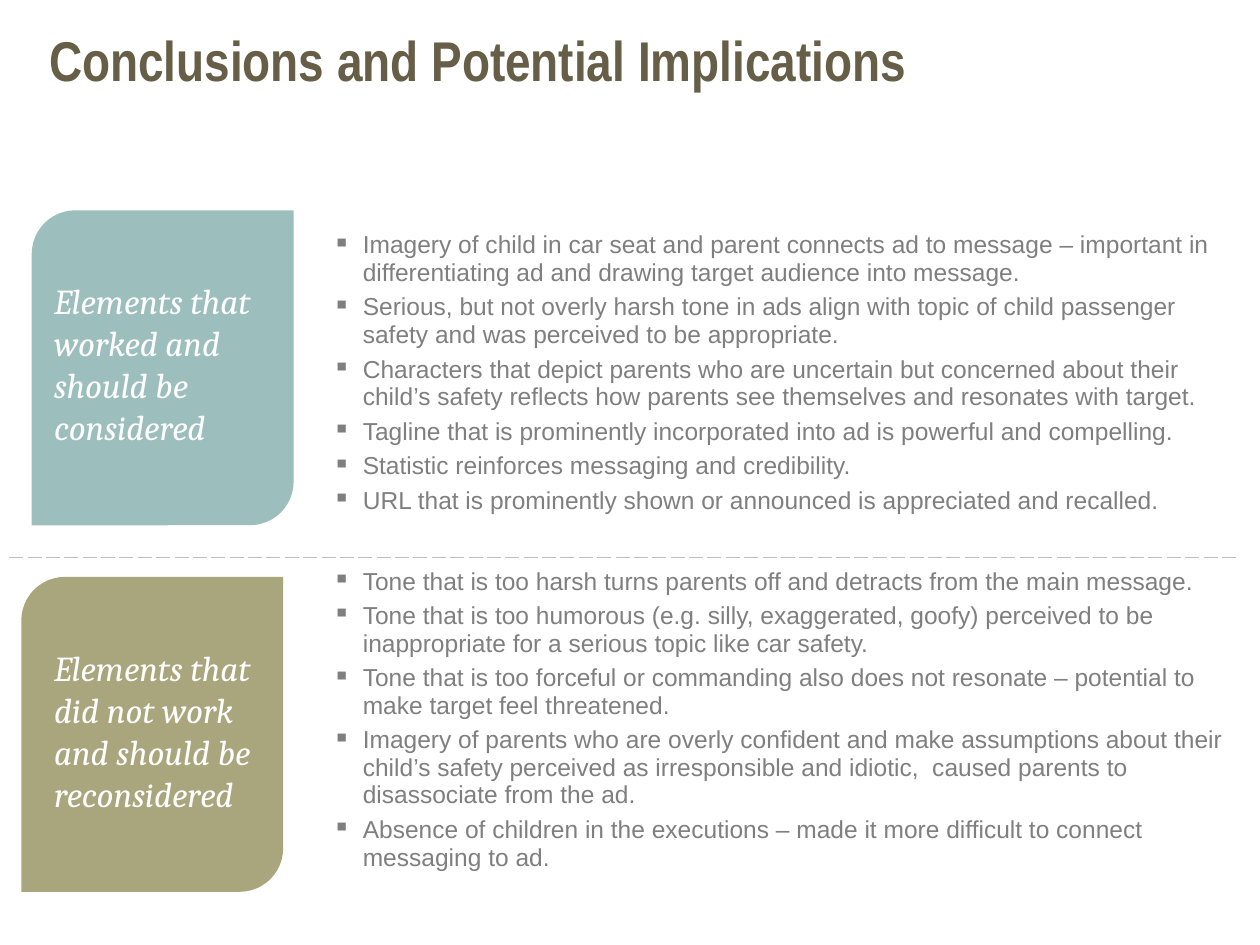
from collections import namedtuple

from lxml.etree import SubElement
from pptx import Presentation
from pptx.dml.color import RGBColor
from pptx.enum.shapes import MSO_SHAPE as Shape
from pptx.enum.text import MSO_ANCHOR as Anchor, PP_ALIGN as Align
from pptx.oxml import parse_xml
from pptx.oxml.ns import nsdecls, qn
from pptx.util import Cm, Pt

Box = namedtuple("Box", "left top width height")

COLORS = {
    "title": "675E47",
    "worked": "9CBEBD",
    "reconsider": "A9A57C",
    "label": "FFFFFF",
    "body": "7F7F7F",
    "rule": "BFBFBF",
}
LABEL_TEXT_LEFT = 0.84

WORKED = [
    "Imagery of child in car seat and parent connects ad to message – important in "
    "differentiating ad and drawing target audience into message.",
    "Serious, but not overly harsh tone in ads align with topic of child passenger "
    "safety and was perceived to be appropriate.",
    "Characters that depict parents who are uncertain but concerned about their "
    "child’s safety reflects how parents see themselves and resonates with target.",
    "Tagline that is prominently incorporated into ad is powerful and compelling.",
    "Statistic reinforces messaging and credibility.",
    "URL that is prominently shown or announced is appreciated and recalled.",
]
RECONSIDER = [
    "Tone that is too harsh turns parents off and detracts from the main message.",
    "Tone that is too humorous (e.g. silly, exaggerated, goofy) perceived to be "
    "inappropriate for a serious topic like car safety.",
    "Tone that is too forceful or commanding also does not resonate – potential to "
    "make target feel threatened.",
    "Imagery of parents who are overly confident and make assumptions about their "
    "child’s safety perceived as irresponsible and idiotic,  caused parents to "
    "disassociate from the ad.",
    "Absence of children in the executions – made it more difficult to connect "
    "messaging to ad.",
]


def lengths(box):
    """Return the sides of a box as Cm lengths."""
    return [Cm(side) for side in box]


def style_paragraph(para, font_name, size, color, gap=0):
    """Set the font, colour and spacing of a left-aligned paragraph."""
    para.alignment = Align.LEFT
    para.space_before = para.space_after = Pt(gap)
    para.font.name = font_name
    para.font.size = Pt(size)
    para.font.color.rgb = RGBColor.from_string(COLORS[color])


def add_title(page, box, text):
    """Place and format the title placeholder."""
    title = page.shapes.title
    title.left, title.top, title.width, title.height = lengths(box)
    frame = title.text_frame
    frame.margin_left = frame.margin_top = frame.margin_right = frame.margin_bottom = 0
    frame.vertical_anchor = Anchor.TOP
    frame.text = text
    para = frame.paragraphs[0]
    style_paragraph(para, "Arial Narrow", 32, "title")
    para.font.bold = True


def add_border(cell, side):
    """Draw a thin dashed border on one side of a cell."""
    border = parse_xml(
        f'<a:{side} {nsdecls("a")} w="6350"><a:solidFill>'
        f'<a:srgbClr val="{COLORS["rule"]}"/></a:solidFill>'
        f'<a:prstDash val="sysDash"/></a:{side}>'
    )
    cell._tc.get_or_add_tcPr().insert(0, border)


def fill_bullets(cell, items):
    """Write a square-bulleted list into a cell."""
    cell.vertical_anchor = Anchor.MIDDLE
    frame = cell.text_frame
    frame.text = "\n".join(items)
    for para in frame.paragraphs:
        style_paragraph(para, "Arial", 14, "body", gap=2)
        props = para._p.get_or_add_pPr()
        props.set("marL", str(Cm(0.94)))
        props.set("indent", str(-Cm(0.61)))
        bullet = SubElement(props, qn("a:buChar"))
        bullet.set("char", "▪")
        props.insert_element_before(bullet, "a:tabLst", "a:defRPr")


def add_findings(page, box, label_width, row_heights, lists):
    """Add the two-row table of findings with a dashed rule between rows."""
    table = page.shapes.add_table(len(lists), 2, *lengths(box)).table
    table.first_row = table.horz_banding = False
    table.columns[0].width = Cm(label_width)
    table.columns[1].width = Cm(box.width - label_width)
    for row, height, items, side in zip(table.rows, row_heights, lists, ("lnB", "lnT")):
        row.height = Cm(height)
        for cell in row.cells:
            cell.fill.background()
            add_border(cell, side)
        fill_bullets(row.cells[1], items)


def add_label(page, box, text, color):
    """Add a coloured card and its italic caption."""
    card = page.shapes.add_shape(Shape.ROUND_2_DIAG_RECTANGLE, *lengths(box))
    card.shadow.inherit = False
    card.fill.solid()
    card.fill.fore_color.rgb = RGBColor.from_string(COLORS[color])
    card.line.fill.background()
    caption_box = Box(LABEL_TEXT_LEFT, box.top + 1.27, 4.7, 3.68)
    frame = page.shapes.add_textbox(*lengths(caption_box)).text_frame
    frame.word_wrap = True
    frame.text = text
    para = frame.paragraphs[0]
    style_paragraph(para, "Cambria", 20, "label", gap=4)
    para.font.italic = True


def main():
    """Build the conclusions slide and save it."""
    deck = Presentation()
    deck.slide_width, deck.slide_height = Cm(25.4), Cm(19.05)
    page = deck.slides.add_slide(deck.slide_layouts[5])
    add_title(page, Box(0.99, 0.51, 17.98, 2), "Conclusions and Potential Implications")
    add_findings(page, Box(0.2, 3.81, 24.77, 13.97), 5.92, (7.42, 6.55), (WORKED, RECONSIDER))
    add_label(page, Box(0.43, 11.63, 5.28, 6.35),
              "Elements that did not work and should be reconsidered", "reconsider")
    add_label(page, Box(0.64, 4.24, 5.28, 6.35),
              "Elements that worked and should be considered", "worked")
    deck.save("out.pptx")


if __name__ == "__main__":
    main()
